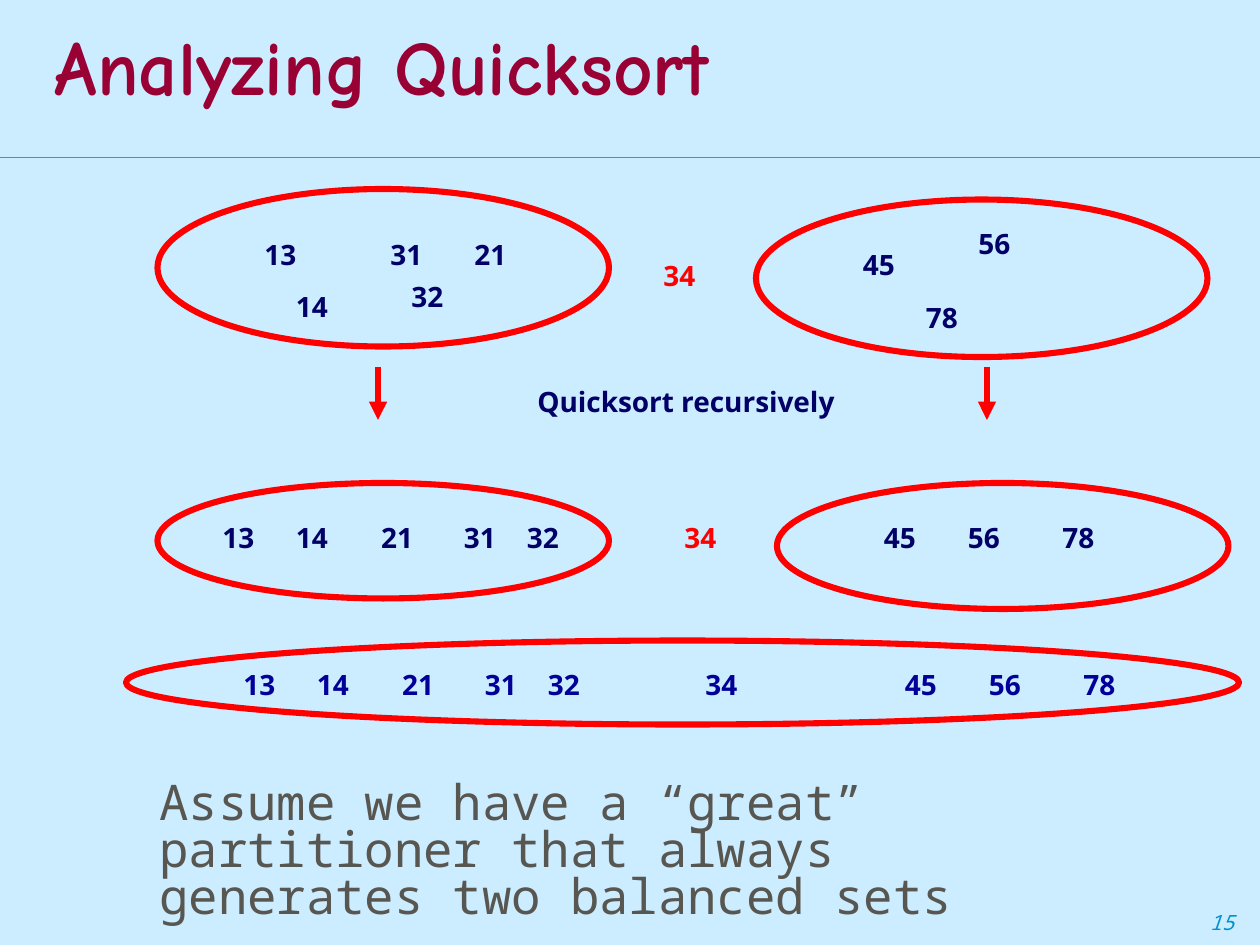
from dataclasses import dataclass

from pptx import Presentation
from pptx.dml.color import RGBColor as Rgb
from pptx.enum.shapes import MSO_CONNECTOR as Connector, MSO_SHAPE as Shape
from pptx.enum.text import MSO_ANCHOR as Anchor, MSO_AUTO_SIZE as AutoSize, PP_ALIGN as Align
from pptx.oxml.ns import qn
from pptx.util import Pt
from lxml.etree import SubElement

PX = 9525  # EMU per px, at 96 px to the inch


@dataclass(frozen=True)
class Theme:
    background: str = "CCECFF"
    title: str = "990033"
    rule: str = "827F77"
    accent: str = "FF0000"
    number: str = "000066"
    sorted_number: str = "000099"
    body: str = "585650"
    page_number: str = "0093D0"
    title_font: str = "Comic Neue"
    label_font: str = "Noto Sans"
    body_font: str = "Noto Sans Mono"
    title_size: int = 44
    body_size: int = 28
    label_size: int = 16
    page_number_size: int = 12
    stroke: float = 3.5
    hairline: float = 0.75


THEME = Theme()

# Ellipses: left, top, width, height
SETS = [
    (120, 144, 344, 120), (576, 152, 344, 120),
    (120, 368, 344, 88), (592, 368, 344, 96),
    (96, 488, 848, 64),
]
PIVOT = 34
# Partitioned numbers: value -> left, top
PARTITIONED = {
    13: (192, 176), 14: (216, 216), 31: (288, 176), 32: (304, 208), 21: (352, 176),
    PIVOT: (496, 192),
    45: (648, 184), 56: (736, 168), 78: (696, 224),
}
# Sorted numbers: value -> left
SORTED = {13: 160, 14: 216, 21: 281, 31: 344, 32: 392, PIVOT: 512, 45: 664, 56: 728, 78: 800}
SORTED_TOP, MERGED_TOP, MERGED_SHIFT = 392, 504, 16
ARROWS = [288, 752]


def emu(*lengths):
    return [length * PX for length in lengths]


def write(frame, text, font, size, color, spacing=1.0, **style):
    para = frame.paragraphs[0]
    para.alignment = Align.LEFT
    para.line_spacing = spacing
    span = para.add_run()
    span.text = text
    for name, value in {"name": font, "size": Pt(size), **style}.items():
        setattr(span.font, name, value)
    span.font.color.rgb = Rgb.from_string(color)


def add_text(page, area, text, *look, wrap=True, anchor=Anchor.TOP, **style):
    frame = page.shapes.add_textbox(*emu(*area)).text_frame
    settings = {
        "word_wrap": wrap,
        "auto_size": AutoSize.SHAPE_TO_FIT_TEXT,
        "vertical_anchor": anchor,
    }
    for name, value in settings.items():
        setattr(frame, name, value)
    write(frame, text, *look, **style)


def add_label(page, left, top, text, color, width=47):
    add_text(page, (left, top, width, 35), text, THEME.label_font, THEME.label_size,
             color, wrap=False, bold=True)


def add_set(page, area):
    ellipse = page.shapes.add_shape(Shape.OVAL, *emu(*area))
    ellipse.shadow.inherit = False
    ellipse.fill.background()
    ellipse.line.color.rgb = Rgb.from_string(THEME.accent)
    ellipse.line.width = Pt(THEME.stroke)


def add_line(page, ends, color, width, arrow=False):
    connector = page.shapes.add_connector(Connector.STRAIGHT, *emu(*ends))
    connector.line.color.rgb = Rgb.from_string(color)
    connector.line.width = Pt(width)
    if arrow:
        SubElement(connector.line._get_or_add_ln(), qn("a:tailEnd"), type="triangle")
    SubElement(connector._element.spPr, qn("a:effectLst"))


def set_title(page, text):
    title = page.shapes.title
    for name, value in zip(("left", "top", "width", "height"), emu(32, 7, 928, 96)):
        setattr(title, name, value)
    title.text_frame.vertical_anchor = Anchor.MIDDLE
    title.text_frame.auto_size = AutoSize.NONE
    write(title.text_frame, text, THEME.title_font, THEME.title_size, THEME.title,
          spacing=0.86, bold=True)


def main():
    deck = Presentation()
    deck.slide_width, deck.slide_height = emu(960, 720)
    page = deck.slides.add_slide(deck.slide_layouts[5])
    page.background.fill.solid()
    page.background.fill.fore_color.rgb = Rgb.from_string(THEME.background)

    # Heading, rule and page number
    set_title(page, "Analyzing Quicksort")
    add_line(page, (0, 120, 960, 120), THEME.rule, THEME.hairline)
    add_text(page, (912, 688, 48, 29), "15", THEME.body_font, THEME.page_number_size,
             THEME.page_number, anchor=Anchor.BOTTOM, italic=True)

    # Sets
    for area in SETS:
        add_set(page, area)

    # Numbers: partitioned, sorted in each half, merged
    for value, (left, top) in PARTITIONED.items():
        color = THEME.accent if value == PIVOT else THEME.number
        add_label(page, left, top, str(value), color)
        add_label(page, SORTED[value], SORTED_TOP, str(value), color)
        add_label(page, SORTED[value] + MERGED_SHIFT, MERGED_TOP, str(value),
                  THEME.sorted_number)

    # Recursion step
    for x in ARROWS:
        add_line(page, (x, 280, x, 320), THEME.accent, THEME.stroke, arrow=True)
    add_label(page, 400, 288, "Quicksort recursively", THEME.number, width=254)

    # Assumption
    add_text(page, (112, 592, 752, 82),
             "Assume we have a “great” partitioner that always generates two balanced sets",
             THEME.body_font, THEME.body_size, THEME.body, spacing=0.8)

    deck.save("out.pptx")


if __name__ == "__main__":
    main()
